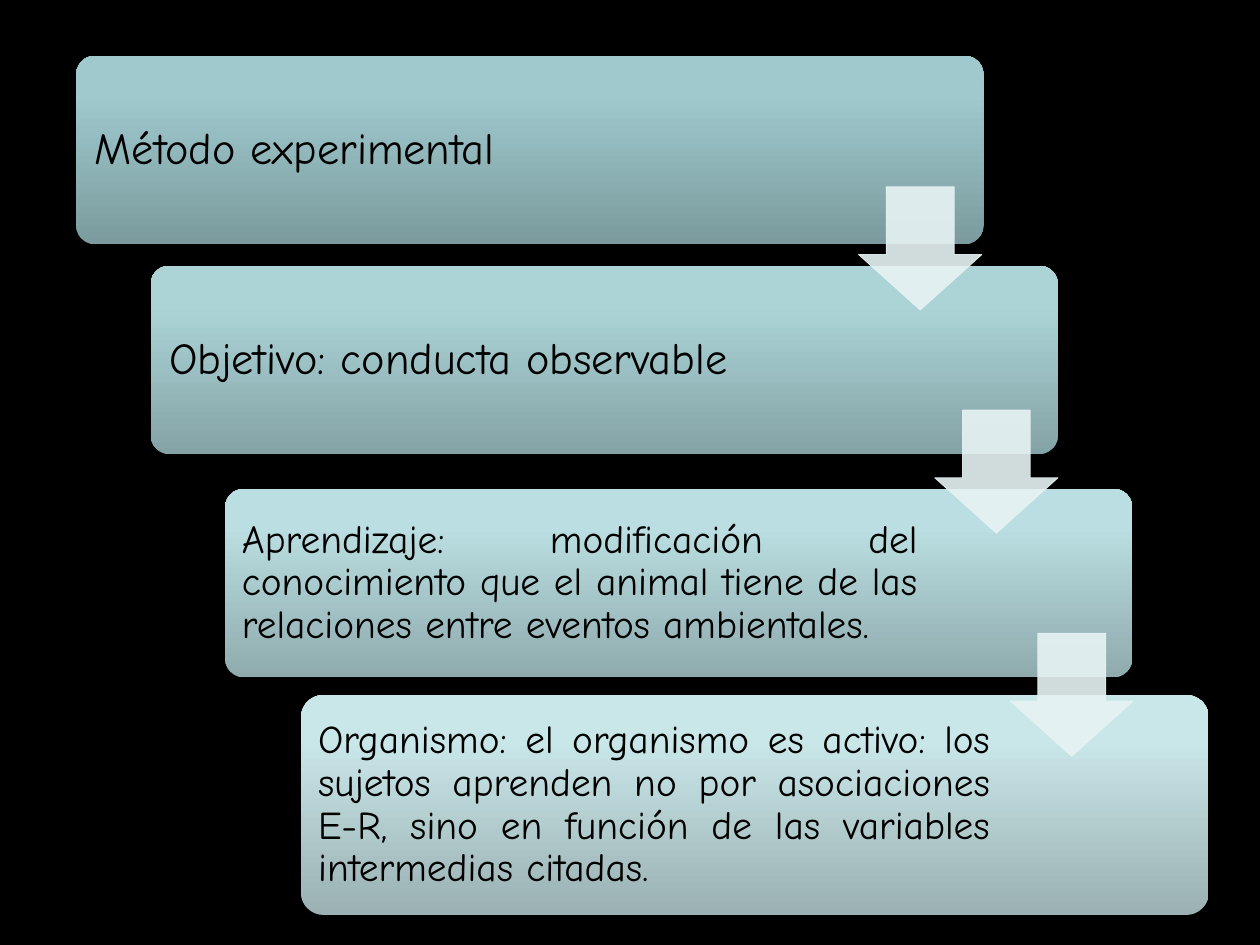
from copy import deepcopy
from lxml.etree import SubElement
from pptx import Presentation
from pptx.dml.color import RGBColor
from pptx.enum.shapes import MSO_SHAPE
from pptx.enum.text import MSO_ANCHOR, PP_ALIGN
from pptx.oxml.ns import qn
from pptx.util import Pt

PX = 9144
BLACK = RGBColor(0, 0, 0)
PALE = RGBColor(0xE7, 0xF3, 0xF4)
SHADES = [
    (RGBColor(0x7B, 0x9B, 0x9E), RGBColor(0x9F, 0xC9, 0xCD), RGBColor(0x9F, 0xCB, 0xCF)),
    (RGBColor(0x84, 0xA3, 0xA6), RGBColor(0xAC, 0xD4, 0xD7), RGBColor(0xAC, 0xD6, 0xD9)),
    (RGBColor(0x8F, 0xAB, 0xAD), RGBColor(0xBA, 0xDE, 0xE1), RGBColor(0xBA, 0xDF, 0xE2)),
    (RGBColor(0x9B, 0xB1, 0xB3), RGBColor(0xC9, 0xE6, 0xE8), RGBColor(0xC9, 0xE8, 0xEA)),
]
STEPS = [
    (86, 63, 213, 776, 36, 15, "Método experimental"),
    (170, 300, 213, 787, 36, 15, "Objetivo: conducta observable"),
    (254, 552, 213, 789, 32, 13,
     "Aprendizaje: modificación del conocimiento que el animal tiene de las "
     "relaciones entre eventos ambientales."),
    (340, 785, 248, 785, 32, 13,
     "Organismo: el organismo es activo: los sujetos aprenden no por asociaciones "
     "E-R, sino en función de las variables intermedias citadas."),
]
ARROWS = [(969, 211), (1055, 463), (1140, 715)]


def box(kind, *place):
    shape = slide.shapes.add_shape(kind, *[n * PX for n in place])
    shape.shadow.inherit = False
    return shape


deck = Presentation()
deck.slide_width, deck.slide_height = 1422 * PX, 1067 * PX
slide = deck.slides.add_slide(deck.slide_layouts[6])
back = slide.background.fill
back.solid()
back.fore_color.rgb = BLACK

for (left, top, high, wide, size, inset, words), shade in zip(STEPS, SHADES):
    card = box(MSO_SHAPE.ROUNDED_RECTANGLE, left, top, 1024, high)
    card.adjustments[0] = 0.1
    card.line.fill.background()
    card.fill.gradient()
    card.fill.gradient_angle = 90
    stops = card.fill._fill._gradFill.find(qn("a:gsLst"))
    stops.append(deepcopy(stops[-1]))
    for stop, spot, color in zip(card.fill.gradient_stops, (0, 0.8, 1), shade):
        stop.position = spot
        stop.color.rgb = color

    place = (left + 6, top + 6, wide, high - 12)
    frame = slide.shapes.add_textbox(*[n * PX for n in place]).text_frame
    look = {"word_wrap": True, "vertical_anchor": MSO_ANCHOR.MIDDLE}
    look |= {f"margin_{side}": inset * PX for side in ("left", "top", "right", "bottom")}
    for name, value in look.items():
        setattr(frame, name, value)
    para = frame.paragraphs[0]
    para.text = words
    para.alignment = PP_ALIGN.JUSTIFY
    para.line_spacing = 0.9
    font = para.runs[0].font
    for name, value in {"name": "Comic Neue", "size": Pt(size)}.items():
        setattr(font, name, value)
    font.color.rgb = BLACK

for left, top in ARROWS:
    arrow = box(MSO_SHAPE.DOWN_ARROW, left, top, 139, 139)
    arrow.adjustments[0] = 0.55
    arrow.adjustments[1] = 0.45
    arrow.line.width = Pt(0.75)
    for fill in (arrow.fill, arrow.line.fill):
        fill.solid()
        fill.fore_color.rgb = PALE
    for color in arrow._element.spPr.iter(qn("a:srgbClr")):
        SubElement(color, qn("a:alpha"), val="90000")

deck.save("out.pptx")
